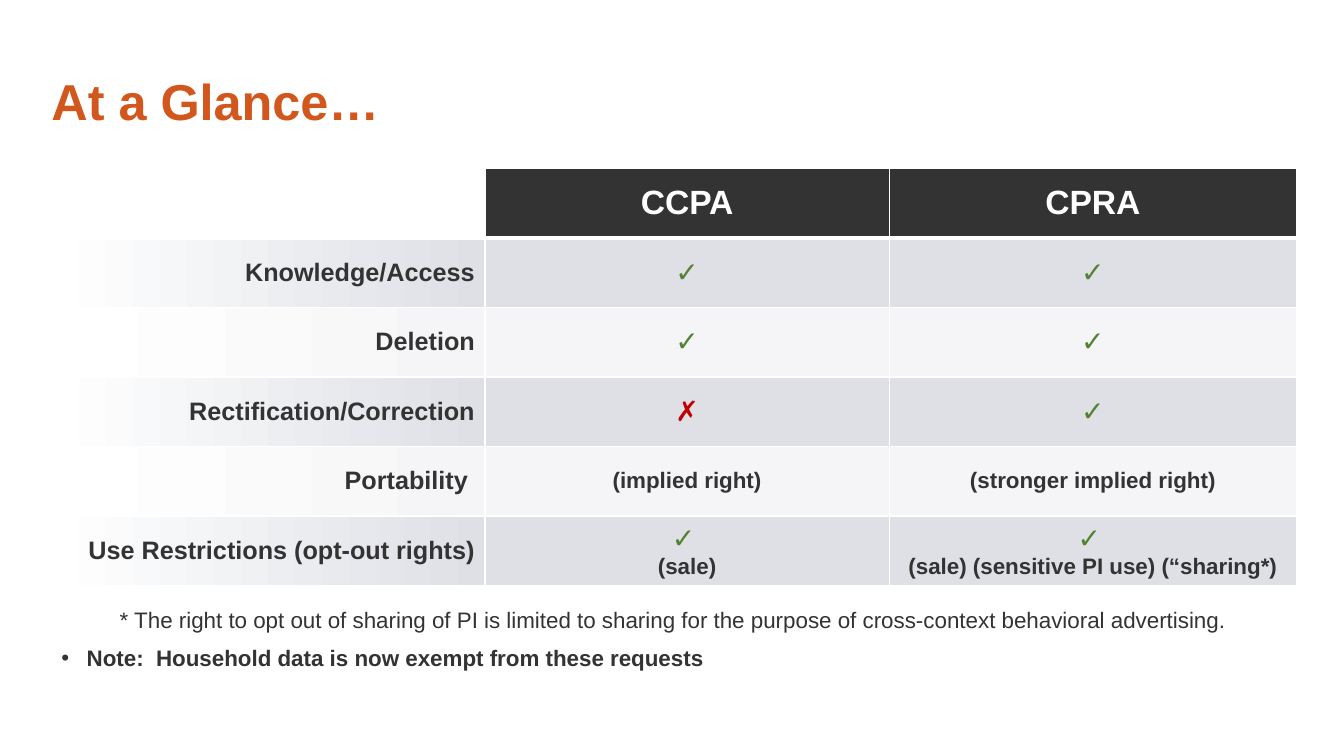
"""Build the slide comparing consumer rights under CCPA and CPRA."""
import pptx
import pptx.util
import pptx.dml.color
import pptx.enum.text
import pptx.oxml.ns
from lxml import etree

TITLE = "At a Glance…"
HEADERS = ["", "CCPA", "CPRA"]
YES, NO = "✓", "✗"
RIGHTS = [
    ("Knowledge/Access", [YES], [YES]),
    ("Deletion", [YES], [YES]),
    ("Rectification/Correction", [NO], [YES]),
    ("Portability ", ["(implied right)"], ["(stronger implied right)"]),
    ("Use Restrictions (opt-out rights)", [YES, "(sale)"],
     [YES, "(sale) (sensitive PI use) (“sharing*)"]),
]
FOOTNOTE = ("* The right to opt out of sharing of PI is limited to sharing "
            "for the purpose of cross-context behavioral advertising.")
NOTE = "Note:  Household data is now exempt from these requests"

THEME = {
    "font": "Arial", "title": "D2571C", "text": "333333", "white": "FFFFFF",
    "bands": ["DEE0E6", "F5F5F7"], "marks": {YES: "548235", NO: "C00000"},
    "title_size": 36, "head_size": 24, "label_size": 18, "mark_size": 20, "note_size": 16,
}
WIDTH, HEIGHT = 13.33, 7.5
LEFT, TOP, ROW = 0.51, 1.67, 0.69
COLUMNS = [4.3, 4.01, 4.04]
TABLE_BOTTOM = TOP + ROW * (len(RIGHTS) + 1)

Inches, Pt = pptx.util.Inches, pptx.util.Pt
ALIGN = pptx.enum.text.PP_ALIGN
MIDDLE = pptx.enum.text.MSO_ANCHOR.MIDDLE


def rgb(name):
    return pptx.dml.color.RGBColor.from_string(name)


def add_text(p, text, size=16, color=THEME["text"], bold=True, align=None):
    r = p.add_run()
    r.text = text
    r.font.name, r.font.size, r.font.bold = THEME["font"], Pt(size), bold
    r.font.color.rgb = rgb(color)
    if align is not None:
        p.alignment = align


def place(sp, left, top, width, height):
    sp.left, sp.top, sp.width, sp.height = map(Inches, (left, top, width, height))
    tf = sp.text_frame
    tf.word_wrap = True
    tf.auto_size = pptx.enum.text.MSO_AUTO_SIZE.NONE
    return tf


def set_bullet(p, margin, indent, char=None):
    pPr = p._p.get_or_add_pPr()
    pPr.set("marL", str(Inches(margin)))
    pPr.set("indent", str(Inches(indent)))
    bullet = etree.SubElement(pPr, pptx.oxml.ns.qn("a:buChar" if char else "a:buNone"))
    if char:
        bullet.set("char", char)


def set_borders(cell, top, bottom):
    tcPr = cell._tc.get_or_add_tcPr()
    for i, (side, points) in enumerate(zip("LRTB", (1, 1, top, bottom))):
        ln = etree.Element(pptx.oxml.ns.qn(f"a:ln{side}"), w=str(Pt(points)))
        fill = etree.SubElement(ln, pptx.oxml.ns.qn("a:solidFill"))
        etree.SubElement(fill, pptx.oxml.ns.qn("a:srgbClr"), val=THEME["white"])
        tcPr.insert(i, ln)


def fill_cell(cell, color, fade=False):
    if fade:
        cell.fill.gradient()
        cell.fill.gradient_angle = 0
        for stop, shade in zip(cell.fill.gradient_stops, (THEME["white"], color)):
            stop.color.rgb = rgb(shade)
    else:
        cell.fill.solid()
        cell.fill.fore_color.rgb = rgb(color)


def write_answer(p, parts):
    for i, part in enumerate(parts):
        if i:
            add_text(p, " ", THEME["label_size"], bold=False)
            p.add_line_break()
        mark = part in THEME["marks"]
        add_text(p, part, THEME["mark_size" if mark else "note_size"],
                 THEME["marks"].get(part, THEME["text"]), align=ALIGN.CENTER)


def add_rights_table(s):
    table = s.shapes.add_table(len(RIGHTS) + 1, len(COLUMNS), Inches(LEFT), Inches(TOP),
                               Inches(sum(COLUMNS)), Inches(TABLE_BOTTOM - TOP)).table
    table.first_row = table.horz_banding = False
    for column, width in zip(table.columns, COLUMNS):
        column.width = Inches(width)
    for y, row in enumerate([HEADERS] + RIGHTS):
        table.rows[y].height = Inches(ROW)
        for x, content in enumerate(row):
            cell = table.cell(y, x)
            cell.vertical_anchor = MIDDLE
            p = cell.text_frame.paragraphs[0]
            if y:
                fill_cell(cell, THEME["bands"][(y - 1) % 2], fade=x == 0)
                if x:
                    write_answer(p, content)
                else:
                    add_text(p, content, THEME["label_size"], align=ALIGN.RIGHT)
            elif content:
                fill_cell(cell, THEME["text"])
                add_text(p, content, THEME["head_size"], THEME["white"], align=ALIGN.CENTER)
            else:
                cell.fill.background()
            set_borders(cell, 3 if y == 1 else 1, 1 if y else 3)


def main():
    prs = pptx.Presentation()
    prs.slide_width, prs.slide_height = Inches(WIDTH), Inches(HEIGHT)
    s = prs.slides.add_slide(prs.slide_layouts[1])

    tf = place(s.shapes.title, 0.41, 0.41, 10.83, 1.25)
    tf.vertical_anchor = MIDDLE
    tf.paragraphs[0].line_spacing = 0.9
    add_text(tf.paragraphs[0], TITLE, THEME["title_size"], THEME["title"], align=ALIGN.LEFT)

    tf = place(s.placeholders[1], LEFT, TABLE_BOTTOM + 0.18, 12.31, 0.82)
    footnote, note = tf.paragraphs[0], tf.add_paragraph()
    set_bullet(footnote, 0.02, 0)
    set_bullet(note, 0.25, -0.25, "•")
    add_text(footnote, FOOTNOTE, THEME["note_size"], bold=False, align=ALIGN.CENTER)
    add_text(note, NOTE, THEME["note_size"], align=ALIGN.LEFT)
    for p, before in ((footnote, 0), (note, 10)):
        p.line_spacing, p.space_before = 0.9, Pt(before)

    add_rights_table(s)
    prs.save("out.pptx")


if __name__ == "__main__":
    main()
